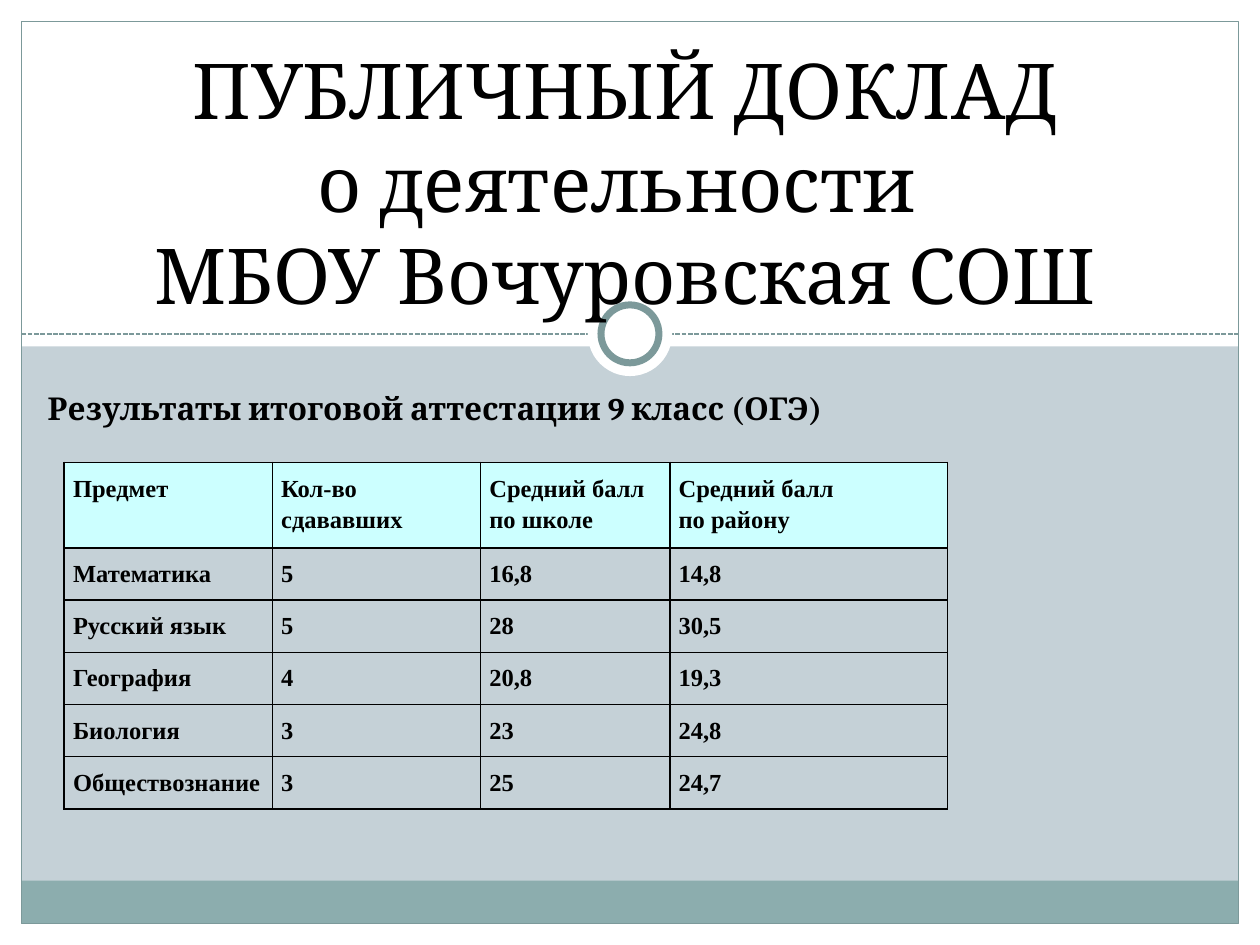
from collections import namedtuple

from lxml.etree import SubElement
from pptx import Presentation
from pptx.dml.color import RGBColor as Color
from pptx.enum.dml import MSO_LINE as Dash
from pptx.enum.shapes import MSO_CONNECTOR as Connector, MSO_SHAPE as Preset
from pptx.enum.text import MSO_ANCHOR as Anchor, PP_ALIGN as Align
from pptx.oxml.ns import qn
from pptx.util import Inches, Pt

Box = namedtuple("Box", "left top width height")

COLUMNS, ROWS = 100, 75
CELL = Inches(0.1)
SLIDE_BOX = Box(0, 0, COLUMNS, ROWS)
TITLE_BOX = Box(7.5, 2.9, 84.3, 23.2)
CAPTION_BOX = Box(2.8, 30.4, 87.4, 7.1)
TABLE_BOX = Box(5.1, 36.7, 70.1, 27.5)

COLORS = {
    "background": "C5D1D7",
    "paper": "FFFFFF",
    "footer": "8CADAE",
    "accent": "7C999A",
    "header": "CCFFFF",
    "ink": "000000",
}

TITLE = ["ПУБЛИЧНЫЙ ДОКЛАД", "о деятельности ", "МБОУ Вочуровская СОШ"]
CAPTION = ["Результаты итоговой аттестации 9 класс (ОГЭ)"]
RESULTS = [
    ["Предмет", "Кол-во\nсдававших", "Средний балл \nпо школе", "Средний балл\nпо району"],
    ["Математика ", "5", "16,8", "14,8"],
    ["Русский язык ", "5", "28", "30,5"],
    ["География", "4", "20,8", "19,3"],
    ["Биология ", "3", "23", "24,8"],
    ["Обществознание", "3", "25", "24,7"],
]
COLUMN_SHARES = [1.65, 1.65, 1.5, 2.2]
HEADER_ROWS = 6.8


def color(name):
    """Return the named colour of the palette."""
    return Color.from_string(COLORS[name])


def grid(*lengths):
    """Turn grid lengths into slide units."""
    return [round(length * CELL) for length in lengths]


def add_preset(slide, preset, box, fill=None, line_width=None):
    """Add a flat preset shape with an optional fill and accent outline."""
    shape = slide.shapes.add_shape(preset, *grid(*box))
    shape.shadow.inherit = False
    if fill:
        shape.fill.solid()
        shape.fill.fore_color.rgb = color(fill)
    else:
        shape.fill.background()
    if line_width:
        shape.line.color.rgb = color("accent")
        shape.line.width = Pt(line_width)
    else:
        shape.line.fill.background()


def add_divider(slide, left, right, level):
    """Add the dashed line under the title."""
    line = slide.shapes.add_connector(Connector.STRAIGHT, *grid(left, level, right, level))
    line.line.color.rgb = color("accent")
    line.line.width = Pt(0.9)
    line.line.dash_style = Dash.SQUARE_DOT
    SubElement(line._element.spPr, qn("a:effectLst"))


def add_backdrop(slide, box):
    """Draw the margins, title band, footer, frame and ring within the box."""
    left, top, width, height = box
    right, bottom = left + width, top + height
    margin, footer, band, divider = 1.7, 3.4, 27.5, 26.5
    inner = Box(left + margin, top + margin, width - 2 * margin, height - 2 * margin)
    edges = [
        Box(left, bottom - margin, width, margin),
        Box(right - margin, top, margin, height),
        Box(left, top, margin, height),
        Box(left, top, width, band),
    ]
    for edge in edges:
        add_preset(slide, Preset.RECTANGLE, edge, "paper")
    footer_box = Box(inner.left, bottom - margin - footer, inner.width, footer)
    add_preset(slide, Preset.RECTANGLE, footer_box, "footer")
    add_divider(slide, inner.left, right - margin, top + divider)
    add_preset(slide, Preset.RECTANGLE, inner, line_width=0.75)
    for diameter, line_width in ((6.7, None), (4.6, 4)):
        ring = Box(left + (width - diameter) / 2, top + divider - diameter / 2, diameter, diameter)
        add_preset(slide, Preset.OVAL, ring, "paper", line_width)


def write_text(text_frame, lines, font_name, size, bold, align, spacing=None):
    """Write one formatted paragraph for each line."""
    text_frame.word_wrap = True
    text_frame.text = "\n".join(lines)
    for paragraph in text_frame.paragraphs:
        paragraph.alignment = align
        paragraph.line_spacing = spacing
        for run in paragraph.runs:
            run.font.name = font_name
            run.font.size = Pt(size)
            run.font.bold = bold
            run.font.color.rgb = color("ink")


def add_text(slide, box, lines, size, bold, align):
    """Add a text box that fills the box."""
    shape = slide.shapes.add_textbox(*grid(*box))
    write_text(shape.text_frame, lines, "Cambria", size, bold, align)


def add_borders(cell):
    """Give a table cell thin borders on all sides."""
    properties = cell._tc.get_or_add_tcPr()
    for position, side in enumerate(("a:lnL", "a:lnR", "a:lnT", "a:lnB")):
        border = SubElement(properties, qn(side), w=str(Pt(1)))
        fill = SubElement(border, qn("a:solidFill"))
        SubElement(fill, qn("a:srgbClr"), val=COLORS["ink"])
        properties.insert(position, border)


def add_results(slide, box):
    """Add the table of exam results, sized to the box."""
    shape = slide.shapes.add_table(len(RESULTS), len(COLUMN_SHARES), *grid(*box))
    table = shape.table
    table.first_row = table.horz_banding = False
    for column, share in zip(table.columns, COLUMN_SHARES):
        column.width = grid(box.width * share / sum(COLUMN_SHARES))[0]
    body_rows = (box.height - HEADER_ROWS) / (len(RESULTS) - 1)
    for row_index, (row, values) in enumerate(zip(table.rows, RESULTS)):
        row.height = grid(body_rows if row_index else HEADER_ROWS)[0]
        for cell, value in zip(row.cells, values):
            cell.margin_left = cell.margin_right = Inches(0.07)
            cell.margin_top = cell.margin_bottom = Inches(0.07)
            cell.vertical_anchor = Anchor.TOP
            if row_index:
                cell.fill.background()
            else:
                cell.fill.solid()
                cell.fill.fore_color.rgb = color("header")
            add_borders(cell)
            write_text(cell.text_frame, value.split("\n"), "Times New Roman", 14, True,
                       Align.JUSTIFY, 1.15)


def main():
    """Build the slide and save it."""
    presentation = Presentation()
    presentation.slide_width, presentation.slide_height = grid(COLUMNS, ROWS)
    slide = presentation.slides.add_slide(presentation.slide_layouts[6])
    slide.background.fill.solid()
    slide.background.fill.fore_color.rgb = color("background")
    add_backdrop(slide, SLIDE_BOX)
    add_text(slide, TITLE_BOX, TITLE, 44, False, Align.CENTER)
    add_results(slide, TABLE_BOX)
    add_text(slide, CAPTION_BOX, CAPTION, 18, True, Align.LEFT)
    presentation.save("out.pptx")


if __name__ == "__main__":
    main()
